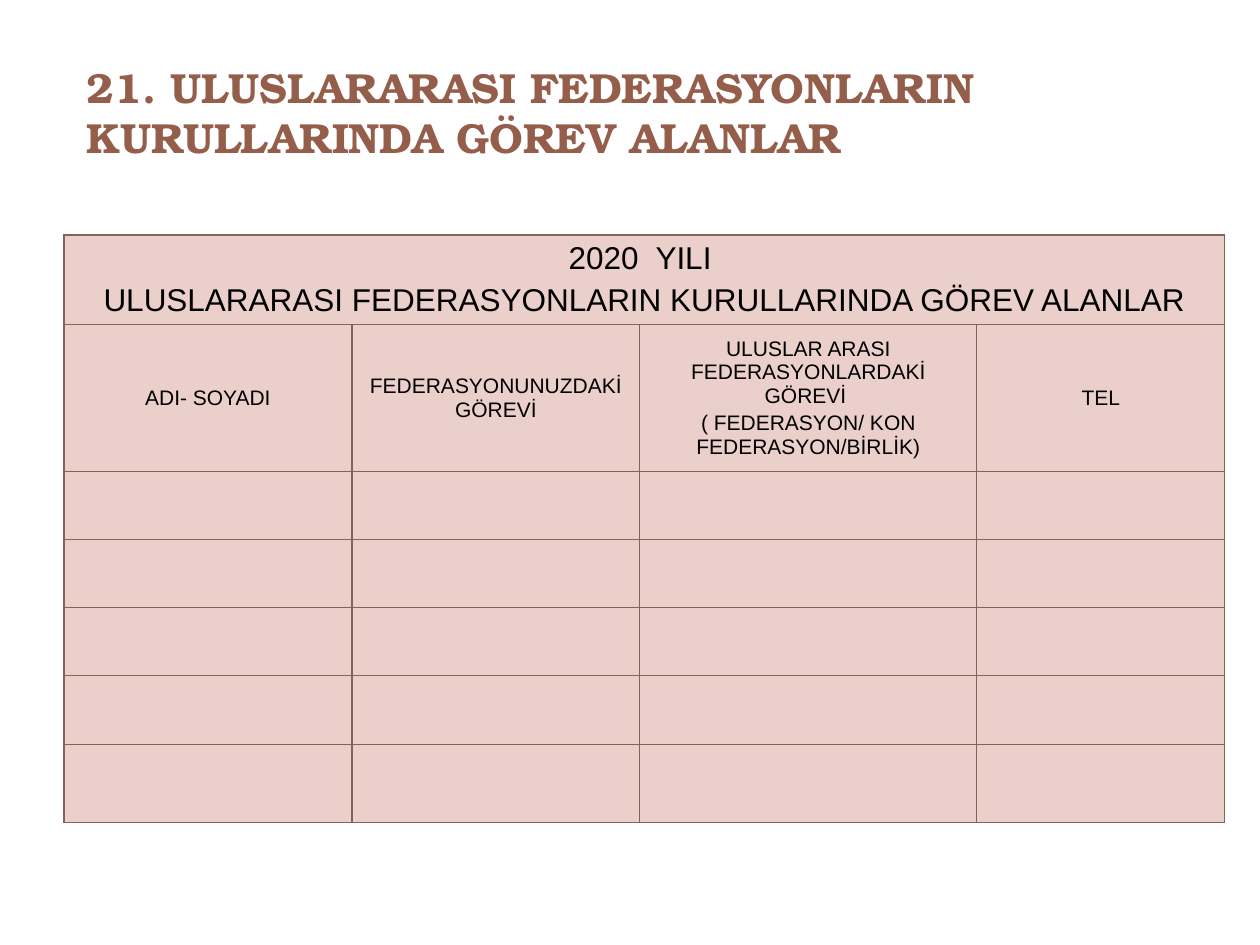
import pptx
import pptx.util
import pptx.dml.color
import pptx.enum.text
import pptx.oxml
import pptx.oxml.ns

RGB = pptx.dml.color.RGBColor
Pt = pptx.util.Pt
ALIGN = pptx.enum.text.PP_ALIGN
ANCHOR = pptx.enum.text.MSO_ANCHOR

# Content
TITLE = "21. ULUSLARARASI FEDERASYONLARIN KURULLARINDA GÖREV ALANLAR"
BANNER = ["2020  YILI ", "ULUSLARARASI FEDERASYONLARIN KURULLARINDA GÖREV ALANLAR"]
HEADS = [
    ["ADI- SOYADI"],
    ["FEDERASYONUNUZDAKİ GÖREVİ"],
    ["ULUSLAR ARASI FEDERASYONLARDAKİ GÖREVİ ", "( FEDERASYON/ KON FEDERASYON/BİRLİK)"],
    ["TEL"],
]

# Look and layout, in px
BROWN = RGB(0x95, 0x5E, 0x4B)
EDGE = RGB(0x89, 0x61, 0x54)
PINK = RGB(0xEA, 0xCF, 0xCB)
BLACK = RGB(0, 0, 0)
COLS = [288, 288, 337, 248]
ROWS = [88, 147, 68, 68, 68, 69, 78]
LEFT, TOP = 64, 235


def px(n):
    return pptx.util.Emu(round(n * 914400 / 126))


def add_run(para, text, font, size, color, bold=False):
    run = para.add_run()
    run.text = text
    run.font.name, run.font.size, run.font.bold = font, Pt(size), bold
    run.font.color.rgb = color


def fill_text(cell, lines, size):
    cell.vertical_anchor = ANCHOR.MIDDLE
    frame = cell.text_frame
    for i, line in enumerate(lines):
        para = frame.add_paragraph() if i else frame.paragraphs[0]
        para.alignment = ALIGN.CENTER
        para.space_before = Pt(size * 0.2)
        add_run(para, line, "Arial", size, BLACK)


def style(cell):
    cell.fill.solid()
    cell.fill.fore_color.rgb = PINK
    props = cell._tc.get_or_add_tcPr()
    for i, side in enumerate(("lnL", "lnR", "lnT", "lnB")):
        props.insert(i, pptx.oxml.parse_xml(
            f'<a:{side} {pptx.oxml.ns.nsdecls("a")} w="{Pt(0.75)}"><a:solidFill>'
            f'<a:srgbClr val="{EDGE}"/></a:solidFill></a:{side}>'))


deck = pptx.Presentation()
deck.slide_width, deck.slide_height = px(1260), px(945)
slide = deck.slides.add_slide(deck.slide_layouts[5])

# Title
title = slide.shapes.title
title.left, title.top, title.width, title.height = px(74), px(55), px(1134), px(158)
title.text_frame.vertical_anchor = ANCHOR.TOP
title.text_frame.word_wrap = True
para = title.text_frame.paragraphs[0]
para.alignment = ALIGN.LEFT
add_run(para, TITLE, "TeX Gyre Bonum", 24, BROWN, True)

# Table
table = slide.shapes.add_table(len(ROWS), len(COLS), px(LEFT), px(TOP),
                               px(sum(COLS)), px(sum(ROWS))).table
table.first_row = table.horz_banding = False
for col, width in zip(table.columns, COLS):
    col.width = px(width)
for row, height in zip(table.rows, ROWS):
    row.height = px(height)
for cell in table.iter_cells():
    style(cell)

# Banner and column heads
table.cell(0, 0).merge(table.cell(0, len(COLS) - 1))
fill_text(table.cell(0, 0), BANNER, 18)
for i, lines in enumerate(HEADS):
    fill_text(table.cell(1, i), lines, 12)

deck.save("out.pptx")
